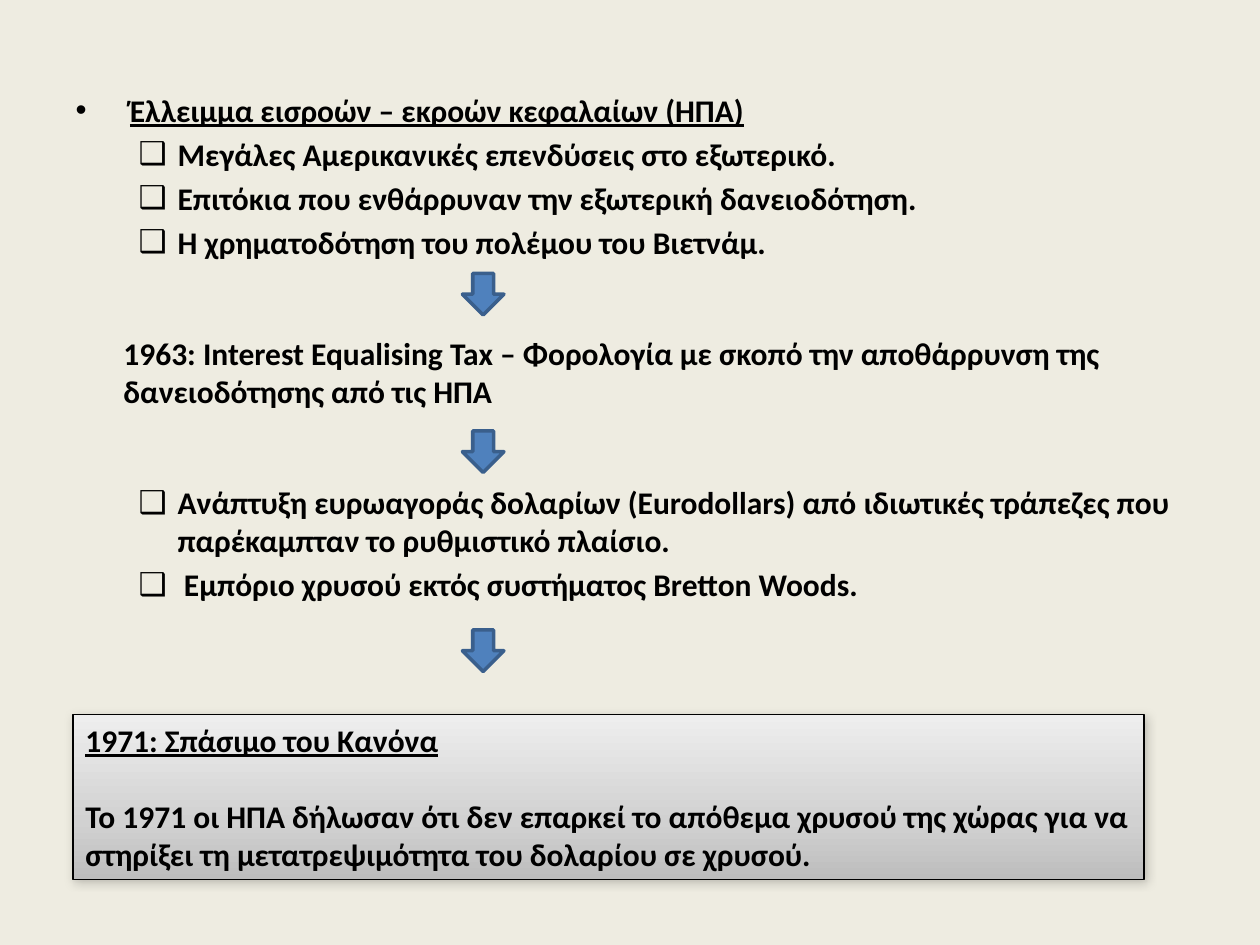
"""Build the slide on the US capital deficit and the end of the gold standard."""

import copy
from dataclasses import dataclass

import lxml.etree
import pptx
import pptx.dml.color
import pptx.enum.shapes
import pptx.enum.text
import pptx.oxml.ns
import pptx.util
from pptx.util import Inches

RGBColor = pptx.dml.color.RGBColor
BACKGROUND = RGBColor(0xEE, 0xEC, 0xE1)
BLACK = RGBColor(0, 0, 0)
ARROW_FILL = RGBColor(0x4F, 0x81, 0xBD)
ARROW_LINE = RGBColor(0x3A, 0x5F, 0x8C)
GRADIENT = (
    (0, RGBColor(0xBD, 0xBD, 0xBD)),
    (0.35, RGBColor(0xD1, 0xD1, 0xD1)),
    (1, RGBColor(0xEE, 0xEE, 0xEE)),
)
FONT_NAME = "Calibri"
FONT_SIZE = 18
LINE_GAP = 3.6
ARROW_GAP = 42
ARROW_LEFT = 3.67
ARROW_SIZE = 0.33
ARROW_TOPS = (2.17, 3.42, 5)


@dataclass(frozen=True)
class Line:
    text: str
    space_before: float = 0
    level: int = 0
    bullet: str = ""
    margin: float = 0
    hanging: float = 0
    underline: bool = False


def point(text: str, space_before: float = LINE_GAP, shift: float = 0) -> Line:
    return Line(text, space_before, 1, "❑", 0.81 + shift, 0.31 + shift)


BODY_LINES = (
    Line("Έλλειμμα εισροών – εκροών κεφαλαίων (ΗΠΑ)", 0, 0, "•", 0.43, 0.43, True),
    point("Μεγάλες Αμερικανικές επενδύσεις στο εξωτερικό."),
    point("Επιτόκια που ενθάρρυναν την εξωτερική δανειοδότηση."),
    point("Η χρηματοδότηση του πολέμου του Βιετνάμ."),
    Line(
        "1963: Interest Equalising Tax – Φορολογία με σκοπό την αποθάρρυνση της "
        "δανειοδότησης από τις ΗΠΑ",
        ARROW_GAP,
        margin=0.38,
    ),
    point(
        "Ανάπτυξη ευρωαγοράς δολαρίων (Eurodollars) από ιδιωτικές τράπεζες που "
        "παρέκαμπταν το ρυθμιστικό πλαίσιο.",
        ARROW_GAP,
    ),
    point("Εμπόριο χρυσού εκτός συστήματος Bretton Woods.", shift=0.05),
)
BOX_LINES = (
    Line("1971: Σπάσιμο του Κανόνα", underline=True),
    Line(
        "Το 1971 οι ΗΠΑ δήλωσαν ότι δεν επαρκεί το απόθεμα χρυσού της χώρας για να "
        "στηρίξει τη μετατρεψιμότητα του δολαρίου σε χρυσού.",
        22,
    ),
)


def add_element(parent, tag: str, **attributes: str):
    return lxml.etree.SubElement(parent, pptx.oxml.ns.qn(tag), attributes)


def write_lines(text_frame, lines: tuple[Line, ...]) -> None:
    text_frame.word_wrap = True
    text_frame.auto_size = pptx.enum.text.MSO_AUTO_SIZE.NONE
    text_frame.text = "\n".join(line.text for line in lines)
    for paragraph, line in zip(text_frame.paragraphs, lines):
        paragraph.level = line.level
        paragraph.alignment = pptx.enum.text.PP_ALIGN.LEFT
        paragraph.space_before = pptx.util.Pt(line.space_before)
        properties = paragraph._p.get_or_add_pPr()
        properties.set("marL", str(Inches(line.margin)))
        properties.set("indent", str(-Inches(line.hanging)))
        if line.bullet:
            add_element(properties, "a:buFont", typeface="Arial")
            add_element(properties, "a:buChar", char=line.bullet)
        else:
            add_element(properties, "a:buNone")
        for run in paragraph.runs:
            run.font.name = FONT_NAME
            run.font.size = pptx.util.Pt(FONT_SIZE)
            run.font.bold = True
            run.font.underline = line.underline
            run.font.color.rgb = BLACK


def add_body(slide) -> None:
    title = slide.shapes.title
    title._element.getparent().remove(title._element)
    body = slide.placeholders[1]
    body.left, body.top = Inches(0.5), Inches(0.67)
    body.width, body.height = Inches(9), Inches(4.83)
    write_lines(body.text_frame, BODY_LINES)


def add_conclusion(slide) -> None:
    box = slide.shapes.add_shape(
        pptx.enum.shapes.MSO_SHAPE.RECTANGLE,
        Inches(0.58), Inches(5.67), Inches(8.5), Inches(1.31),
    )
    box.line.color.rgb = BLACK
    box.line.width = pptx.util.Pt(0.75)
    box.fill.gradient()
    box.fill.gradient_angle = 90
    stop_list = box._element.spPr.find(".//" + pptx.oxml.ns.qn("a:gsLst"))
    stop_list.append(copy.deepcopy(stop_list[0]))
    for stop, (position, color) in zip(box.fill.gradient_stops, GRADIENT):
        stop.position = position
        stop.color.rgb = color
    box.shadow.inherit = False
    effects = box._element.spPr.find(pptx.oxml.ns.qn("a:effectLst"))
    shadow = add_element(
        effects, "a:outerShdw", blurRad=str(pptx.util.Pt(6)),
        dist=str(pptx.util.Pt(1)), dir="2700000", rotWithShape="0",
    )
    shadow_color = add_element(shadow, "a:srgbClr", val=str(BLACK))
    add_element(shadow_color, "a:alpha", val="20000")
    write_lines(box.text_frame, BOX_LINES)


def add_arrow(slide, top: float) -> None:
    arrow = slide.shapes.add_shape(
        pptx.enum.shapes.MSO_SHAPE.DOWN_ARROW,
        Inches(ARROW_LEFT), Inches(top), Inches(ARROW_SIZE), Inches(ARROW_SIZE),
    )
    arrow.shadow.inherit = False
    arrow.fill.solid()
    arrow.fill.fore_color.rgb = ARROW_FILL
    arrow.line.color.rgb = ARROW_LINE
    arrow.line.width = pptx.util.Pt(2)


def main() -> None:
    presentation = pptx.Presentation()
    presentation.slide_width = Inches(10)
    presentation.slide_height = Inches(7.5)
    slide = presentation.slides.add_slide(presentation.slide_layouts[1])
    slide.background.fill.solid()
    slide.background.fill.fore_color.rgb = BACKGROUND
    add_body(slide)
    add_conclusion(slide)
    for top in ARROW_TOPS:
        add_arrow(slide, top)
    presentation.save("out.pptx")


if __name__ == "__main__":
    main()
